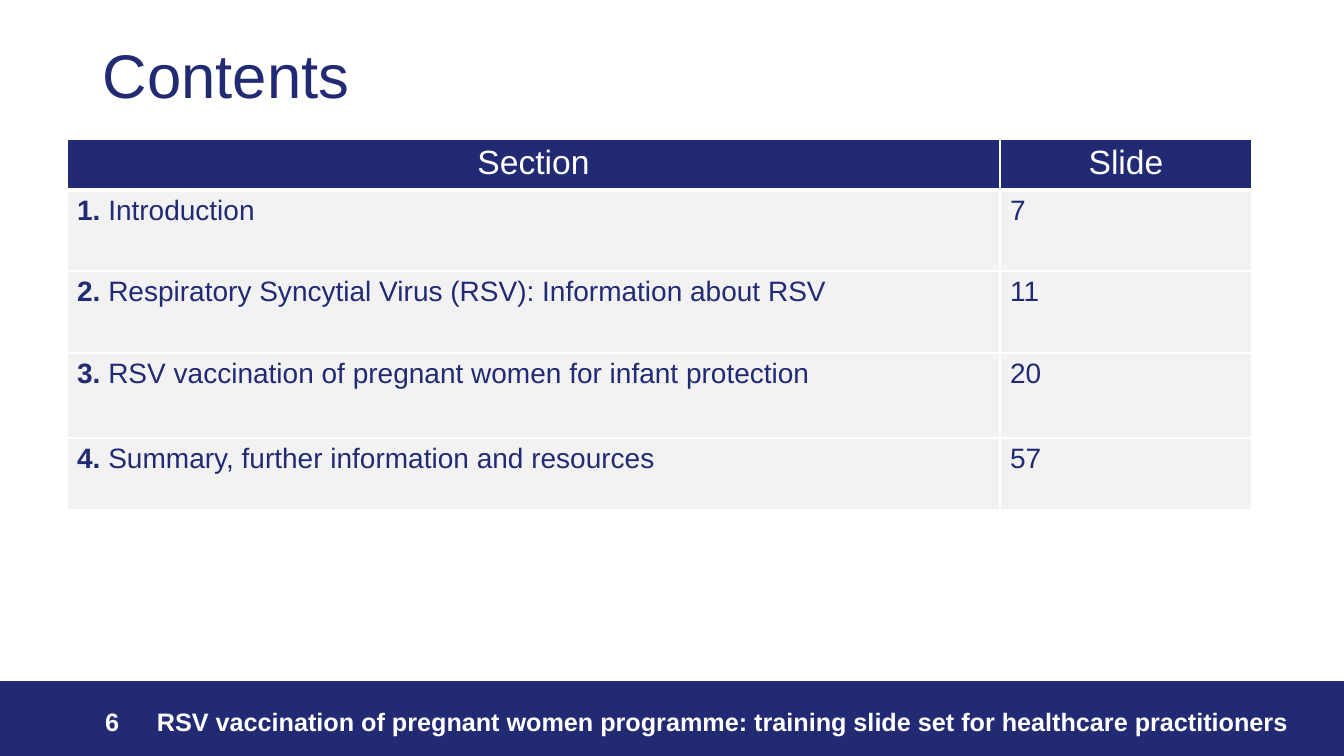
from lxml import etree
from pptx import Presentation, util as u
from pptx.dml.color import RGBColor
from pptx.enum import shapes, text
from pptx.oxml import ns

NAVY = RGBColor(0x21, 0x2A, 0x73)
WHITE = RGBColor(0xFF, 0xFF, 0xFF)
GREY = RGBColor(0xF2, 0xF2, 0xF2)
LEFT, MID, RIGHT = text.PP_ALIGN.LEFT, text.PP_ALIGN.CENTER, text.PP_ALIGN.RIGHT
WIDE, HIGH = 1344, 756
SECTIONS = [
    ("Introduction", "7"),
    ("Respiratory Syncytial Virus (RSV): Information about RSV", "11"),
    ("RSV vaccination of pregnant women for infant protection", "20"),
    ("Summary, further information and resources", "57"),
]


def px(size):
    """Turn pixels into EMU."""
    return u.Emu(round(size * 12192000 / WIDE))


class Deck:
    """Hold the style and the current slide."""

    font = "Arial"

    def __init__(self):
        """Open a blank slide."""
        self.file = Presentation()
        self.file.slide_width, self.file.slide_height = px(WIDE), px(HIGH)
        self.slide = self.file.slides.add_slide(self.file.slide_layouts[6])

    def put(self, frame, runs, size, color, align=LEFT, space=1.0):
        """Fill a frame with one paragraph of (words, bold) runs."""
        line = frame.paragraphs[0]
        line.alignment, line.line_spacing = align, space
        for words, bold in runs:
            run = line.add_run()
            run.text = words
            run.font.name, run.font.size = self.font, u.Pt(size)
            run.font.bold, run.font.color.rgb = bold, color

    def band(self, x, y, w, h, color):
        """Draw a filled bar."""
        bar = self.slide.shapes.add_shape(
            shapes.MSO_SHAPE.RECTANGLE, px(x), px(y), px(w), px(h))
        bar.shadow.inherit = False
        bar.fill.solid()
        bar.fill.fore_color.rgb = color
        bar.line.color.rgb, bar.line.width = color, u.Pt(1)

    def label(self, x, y, w, h, runs, size, color, align=LEFT, space=1.0):
        """Place a text box."""
        box = self.slide.shapes.add_textbox(px(x), px(y), px(w), px(h))
        box.text_frame.word_wrap = True
        self.put(box.text_frame, runs, size, color, align, space)

    def edge(self, cell, side, width):
        """Draw one white border of a cell."""
        props = cell._tc.get_or_add_tcPr()
        line = etree.SubElement(props, ns.qn(f"a:ln{side}"), w=str(u.Pt(width)))
        fill = etree.SubElement(line, ns.qn("a:solidFill"))
        etree.SubElement(fill, ns.qn("a:srgbClr"), val=str(WHITE))

    def table(self, x, y, cols, rows, cells):
        """Build a table with a header row from runs."""
        grid = self.slide.shapes.add_table(
            len(rows), len(cols), px(x), px(y), px(sum(cols)), px(sum(rows))).table
        grid.horz_banding = False
        for col, w in zip(grid.columns, cols):
            col.width = px(w)
        for i, (row, h) in enumerate(zip(grid.rows, rows)):
            row.height = px(h)
            head = i == 0
            for cell, runs in zip(row.cells, cells[i]):
                for side in "LRTB":
                    thick = (side == "B" and head) or (side == "T" and i == 1)
                    self.edge(cell, side, 3 if thick else 1)
                cell.fill.solid()
                cell.fill.fore_color.rgb = NAVY if head else GREY
                self.put(cell.text_frame, runs, 24 if head else 20,
                         WHITE if head else NAVY, MID if head else LEFT)


def main():
    """Build the contents slide."""
    deck = Deck()
    deck.band(0, 682, WIDE, 74, NAVY)
    deck.label(93, 40, 1159, 146, [("Contents", False)], 44, NAVY, space=0.9)
    deck.label(147, 701, 1197, 40, [(
        "RSV vaccination of pregnant women programme: "
        "training slide set for healthcare practitioners", True)], 18, WHITE)
    deck.label(0, 701, 129, 40, [("6", True)], 18, WHITE, RIGHT)
    cells = [[[("Section", False)], [("Slide", False)]]]
    for n, (name, page) in enumerate(SECTIONS, 1):
        cells.append([[(f"{n}. ", True), (name, False)], [(page, False)]])
    deck.table(67, 139, [933, 252], [51, 81, 82, 85, 72], cells)
    deck.file.save("out.pptx")


if __name__ == "__main__":
    main()
